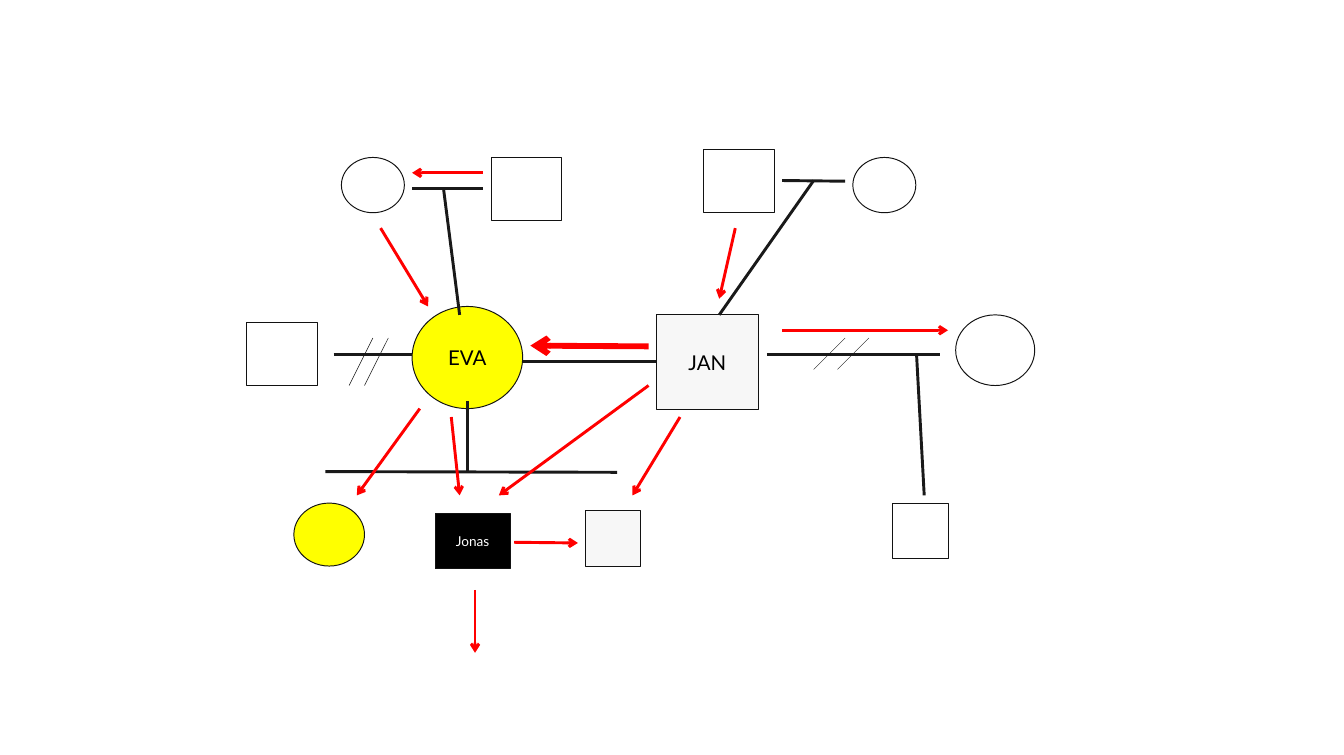
from dataclasses import dataclass
from lxml import etree
from pptx import Presentation
from pptx import util as u
from pptx.dml.color import RGBColor
from pptx.enum import shapes, text
from pptx.oxml import ns


@dataclass(frozen=True)
class Theme:
    font: str = "Lato"
    large: int = 21
    small: int = 14
    white: str = "FFFFFF"
    black: str = "000000"
    yellow: str = "FFFF00"
    grey: str = "F7F7F7"
    edge: str = "121212"
    bond: str = "191919"
    red: str = "FF0000"
    thin: float = 0.5
    thick: float = 3
    heavy: float = 6


class Chart:
    """Draws the family diagram on one slide."""

    def __init__(self, slide, theme):
        self.slide, self.theme = slide, theme

    def person(self, kind, box, fill, name="", size=None, ink=None):
        form = self.slide.shapes.add_shape(kind, *map(u.Inches, box))
        form.shadow.inherit = False
        form.fill.solid()
        form.fill.fore_color.rgb = RGBColor.from_string(fill)
        form.line.color.rgb = RGBColor.from_string(self.theme.edge)
        form.line.width = u.Pt(1)
        if name:
            self.label(form.text_frame, name, size, ink)

    def label(self, frame, name, size, ink):
        frame.margin_left = frame.margin_right = u.Inches(0.17)
        frame.margin_top = frame.margin_bottom = u.Inches(0.09)
        frame.vertical_anchor = text.MSO_ANCHOR.MIDDLE
        para = frame.paragraphs[0]
        para.text = name
        para.alignment = text.PP_ALIGN.CENTER
        para.font.name = self.theme.font
        para.font.size = u.Pt(size)
        para.font.color.rgb = RGBColor.from_string(ink)

    def woman(self, box, fill, *label):
        self.person(shapes.MSO_SHAPE.OVAL, box, fill, *label)

    def man(self, box, fill, *label):
        self.person(shapes.MSO_SHAPE.RECTANGLE, box, fill, *label)

    def line(self, ends, color, width):
        link = self.slide.shapes.add_connector(
            shapes.MSO_CONNECTOR.STRAIGHT, *map(u.Inches, ends))
        link.line.color.rgb = RGBColor.from_string(color)
        link.line.width = u.Pt(width)
        etree.SubElement(link._element.spPr, ns.qn("a:effectLst"))
        return link

    def bond(self, *ends):
        self.line(ends, self.theme.bond, self.theme.thick)

    def split(self, left, right, top, drop, lean):
        """Two slanted strokes that mark a separation."""
        for x in (left, right):
            self.line((x, top, x - lean, top + drop),
                      self.theme.bond, self.theme.thin)

    def arrow(self, *ends, width=None):
        link = self.line(ends, self.theme.red, width or self.theme.thick)
        tail = etree.SubElement(link.line._get_or_add_ln(), ns.qn("a:tailEnd"))
        tail.set("type", "arrow")


def main():
    deck = Presentation()
    deck.slide_width, deck.slide_height = u.Inches(19.21), u.Inches(10.79)
    theme = Theme()
    tree = Chart(deck.slides.add_slide(deck.slide_layouts[6]), theme)

    # Women
    tree.woman((5.89, 4.38, 1.58, 1.46), theme.yellow,
               "EVA", theme.large, theme.black)
    tree.woman((4.2, 7.19, 1.01, 0.9), theme.yellow)
    tree.woman((13.66, 4.5, 1.13, 1.01), theme.white)
    for x in (4.88, 12.19):
        tree.woman((x, 2.25, 0.9, 0.79), theme.white)

    # Men
    tree.man((9.38, 4.5, 1.46, 1.35), theme.grey,
             "JAN", theme.large, theme.black)
    for x, y in ((3.53, 4.61), (7.02, 2.25), (10.06, 2.14)):
        tree.man((x, y, 1.01, 0.9), theme.white)
    tree.man((8.37, 7.3, 0.79, 0.79), theme.grey)
    tree.man((12.76, 7.19, 0.79, 0.79), theme.white)

    # Couples
    tree.bond(4.77, 5.06, 5.89, 5.06)
    tree.bond(7.47, 5.17, 9.38, 5.17)
    tree.bond(10.96, 5.06, 13.43, 5.06)
    tree.bond(11.18, 2.58, 12.08, 2.59)
    tree.bond(5.89, 2.7, 6.9, 2.7)

    # Descent
    tree.bond(6.68, 5.73, 6.68, 6.75)
    tree.bond(4.65, 6.74, 8.82, 6.75)
    tree.bond(11.63, 2.58, 10.28, 4.5)
    tree.bond(6.34, 2.7, 6.57, 4.5)
    tree.bond(13.1, 5.06, 13.21, 7.08)

    # Separations
    tree.split(5.33, 5.55, 4.83, 0.68, 0.34)
    tree.split(12.08, 12.42, 4.83, 0.45, 0.45)

    # Influence between people
    tree.arrow(9.27, 4.95, 7.58, 4.94, width=theme.heavy)
    for ends in (
        (6.9, 2.47, 5.89, 2.47),
        (9.27, 5.51, 7.13, 7.08),
        (6, 5.84, 5.1, 7.08),
        (6.45, 5.96, 6.57, 7.08),
        (11.18, 4.72, 13.55, 4.72),
        (10.51, 3.26, 10.28, 4.27),
        (9.72, 5.96, 9.04, 7.08),
        (5.44, 3.26, 6.12, 4.38),
        (6.79, 8.43, 6.79, 9.33),
        (7.35, 7.75, 8.26, 7.76),
    ):
        tree.arrow(*ends)

    # Son in focus
    tree.man((6.22, 7.34, 1.07, 0.79), theme.black,
             "Jonas", theme.small, theme.white)

    deck.save("out.pptx")


if __name__ == "__main__":
    main()
